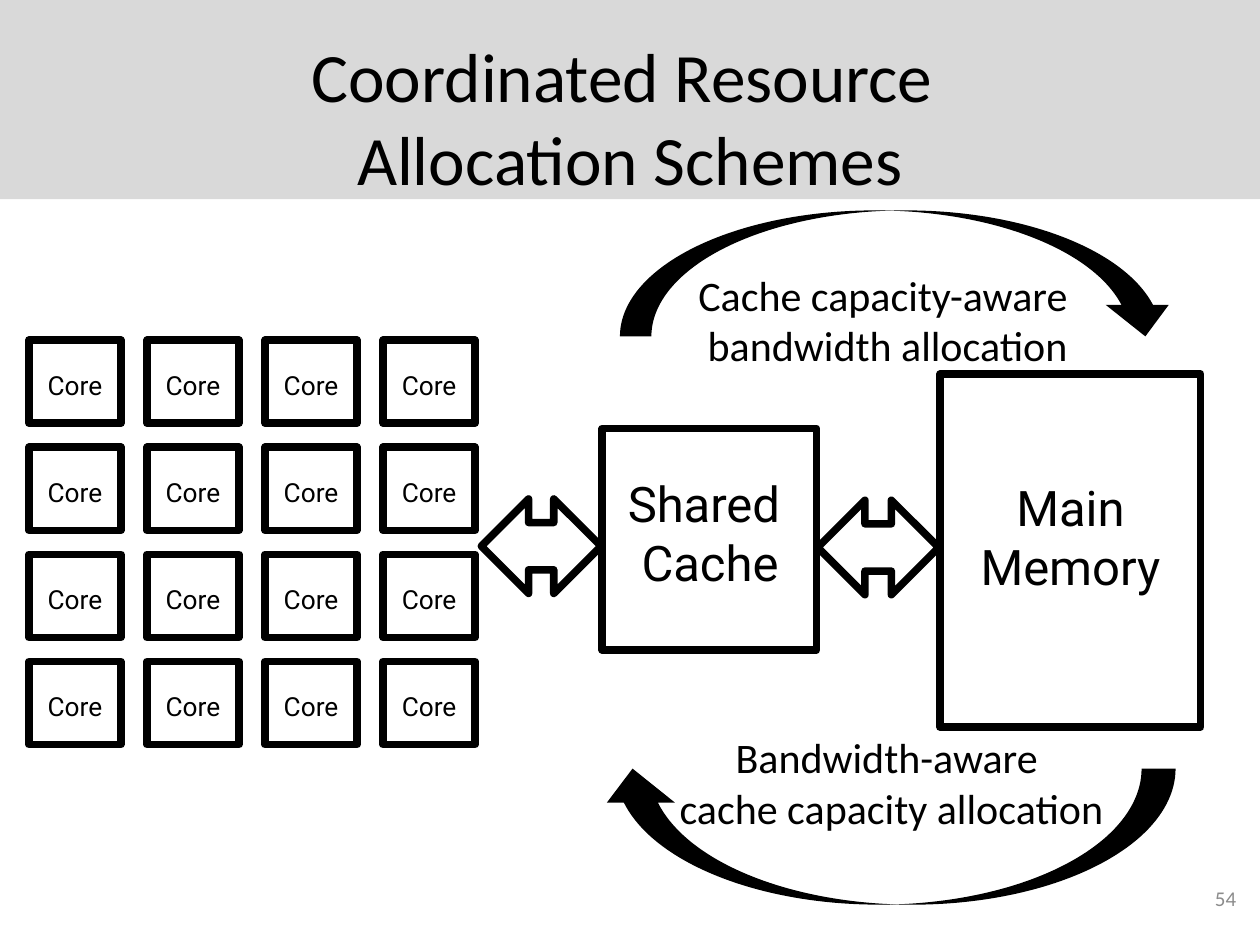
from lxml.etree import SubElement
from pptx import Presentation
from pptx.dml.color import RGBColor
from pptx.enum.shapes import MSO_SHAPE as Shape
from pptx.enum.text import MSO_ANCHOR as Anchor, PP_ALIGN as Align
from pptx.oxml.ns import qn
from pptx.util import Inches, Pt

COLORS = {"ink": "000000", "band": "D9D9D9", "number": "8C8C8C"}


def write(target, text, font, size, color="ink", align=Align.CENTER, anchor=Anchor.TOP):
    """Fill a text holder, one paragraph per line of text."""
    frame = target.text_frame
    frame.word_wrap = True
    frame.vertical_anchor = anchor
    frame.text = text
    for paragraph in frame.paragraphs:
        paragraph.alignment = align
        for name, value in {"name": font, "size": Pt(size)}.items():
            setattr(paragraph.font, name, value)
        paragraph.font.color.rgb = RGBColor.from_string(COLORS[color])


def draw(kind, place, fill=None):
    """Add a solid shape without line, or a thick rounded outline if no fill is given."""
    shape = slide.shapes.add_shape(kind, *map(Inches, place))
    shape.shadow.inherit = False
    if fill:
        shape.fill.solid()
        shape.fill.fore_color.rgb = RGBColor.from_string(COLORS[fill])
        shape.line.fill.background()
    else:
        shape.fill.background()
        shape.line.color.rgb = RGBColor.from_string(COLORS["ink"])
        shape.line.width = Pt(4.32)
        SubElement(shape.line._ln, qn("a:round"))
    return shape


prs = Presentation()
prs.slide_width, prs.slide_height = Inches(10), Inches(7.5)
slide = prs.slides.add_slide(prs.slide_layouts[5])

# Title on its band
title = slide.shapes.title
title.left, title.top, title.width, title.height = map(Inches, (0.5, 0.3, 9, 1.25))
write(title, "Coordinated Resource \vAllocation Schemes", "Calibri", 39.6, anchor=Anchor.MIDDLE)
band = draw(Shape.RECTANGLE, (0, 0, 10, 1.58), "band")
slide.shapes._spTree.insert(2, band._element)

page_number = slide.shapes.add_textbox(*map(Inches, (7.58, 6.93, 2.33, 0.4)))
write(page_number, "54", "Calibri", 12, "number", Align.RIGHT, Anchor.MIDDLE)

# Four by four grid of cores
for row in range(4):
    for column in range(4):
        left, top = 0.23 + 0.937 * column, 2.7 + 0.85 * row
        draw(Shape.RECTANGLE, (left, top, 0.73, 0.66))
        core = slide.shapes.add_textbox(*map(Inches, (left, top + 0.18, 0.73, 0.35)))
        write(core, "Core", "Roboto", 15)

# Memory hierarchy and the links between its levels
for kind, place in [
    (Shape.RECTANGLE, (7.46, 2.97, 2.07, 2.8)),
    (Shape.LEFT_RIGHT_ARROW, (6.49, 3.97, 0.96, 0.75)),
    (Shape.RECTANGLE, (4.78, 3.4, 1.7, 1.76)),
    (Shape.LEFT_RIGHT_ARROW, (3.82, 3.96, 0.95, 0.75)),
]:
    draw(kind, place)

# Coordination arrows between cache and memory
draw(Shape.CURVED_DOWN_ARROW, (4.92, 1.67, 4.42, 1), "ink")
feedback = draw(Shape.CURVED_LEFT_ARROW, (6.5, 4.35, 1.08, 4.58), "ink")
feedback.rotation = 90

for text, place, font, size in [
    ("Main Memory", (7.49, 3.74, 2.01, 1.04), "Roboto", 28),
    ("Shared \nCache", (4.81, 3.71, 1.65, 1.04), "Roboto", 28),
    ("Cache capacity-aware \nbandwidth allocation", (4.92, 2.09, 4.25, 0.91), "Calibri", 24),
    ("Bandwidth-aware \ncache capacity allocation", (4.95, 5.76, 4.25, 0.91), "Calibri", 24),
]:
    label = slide.shapes.add_textbox(*map(Inches, place))
    write(label, text, font, size)

prs.save("out.pptx")
